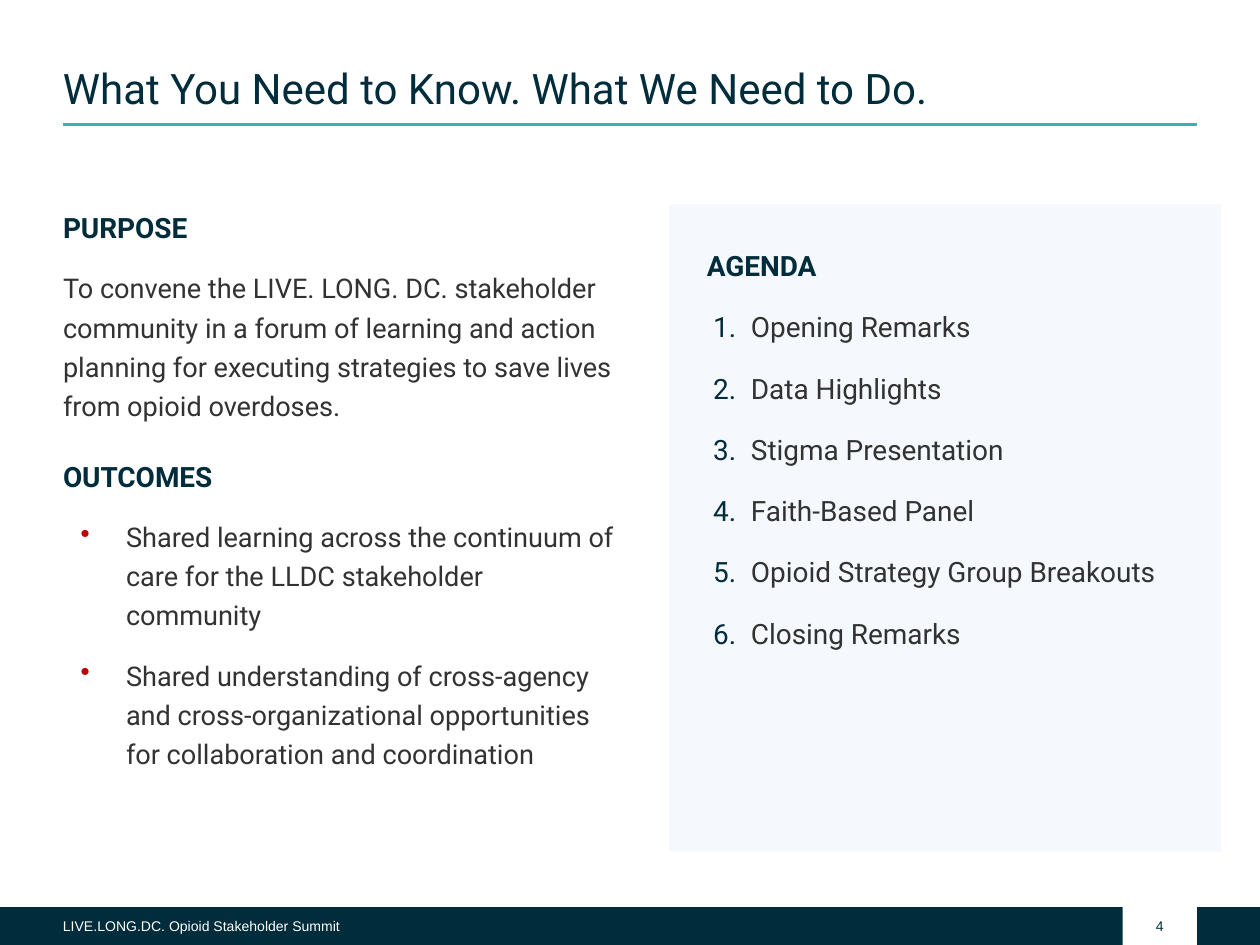
from dataclasses import dataclass

import lxml.etree
import pptx
import pptx.dml.color
import pptx.enum.shapes
import pptx.enum.text
import pptx.oxml.ns
import pptx.util

Inches = pptx.util.Inches
Pt = pptx.util.Pt
qn = pptx.oxml.ns.qn
ANCHOR = pptx.enum.text.MSO_ANCHOR


@dataclass(frozen=True)
class Theme:
    navy: str = "012C3B"
    teal: str = "32B2B9"
    red: str = "BF0000"
    ink: str = "313231"
    white: str = "FFFFFF"
    panel: str = "ECF3FC"
    panel_alpha: int = 48
    font: str = "Roboto"
    footer_font: str = "Arial"
    title_size: float = 24
    heading_size: float = 16
    body_size: float = 15.5
    footer_size: float = 8
    line_spacing: float = 1.2


THEME = Theme()
MARGIN = 0.5
COLUMN_TOP, COLUMN_WIDTH, COLUMN_HEIGHT = 1.62, 4.38, 5.14
FOOTER_TOP, FOOTER_HEIGHT = 7.2, 0.3
OUTCOMES = (
    "Shared learning across the continuum of care for the LLDC stakeholder community",
    "Shared understanding of cross-agency and cross-organizational opportunities "
    "for collaboration and coordination",
)
AGENDA = (
    "Opening Remarks",
    "Data Highlights",
    "Stigma Presentation",
    "Faith-Based Panel",
    "Opioid Strategy Group Breakouts",
    "Closing Remarks",
)


def rgb(color):
    return pptx.dml.color.RGBColor.from_string(color)


def prepare_frame(shape, anchor, inset=0):
    frame = shape.text_frame
    frame.word_wrap = True
    frame.vertical_anchor = anchor
    frame.margin_left = frame.margin_right = Inches(inset)
    frame.margin_top = frame.margin_bottom = Inches(inset)
    return frame


def add_box(slide, left, top, width, height, color, alpha=None):
    shape = slide.shapes.add_shape(
        pptx.enum.shapes.MSO_SHAPE.RECTANGLE,
        Inches(left), Inches(top), Inches(width), Inches(height),
    )
    shape.shadow.inherit = False
    shape.fill.solid()
    shape.fill.fore_color.rgb = rgb(color)
    shape.line.fill.background()
    if alpha is not None:
        fill_color = shape.fill._xPr.find(qn("a:solidFill"))[0]
        lxml.etree.SubElement(fill_color, qn("a:alpha"), val=str(alpha * 1000))
    return shape


def add_text_frame(slide, left, top, width, height, anchor=ANCHOR.TOP):
    box = slide.shapes.add_textbox(
        Inches(left), Inches(top), Inches(width), Inches(height)
    )
    return prepare_frame(box, anchor)


def add_rule(slide, left, right, y):
    rule = slide.shapes.add_connector(
        pptx.enum.shapes.MSO_CONNECTOR.STRAIGHT,
        Inches(left), Inches(y), Inches(right), Inches(y),
    )
    rule.line.color.rgb = rgb(THEME.teal)
    rule.line.width = Pt(2)
    lxml.etree.SubElement(rule._element.spPr, qn("a:effectLst"))


def set_marker(paragraph, color, indent, hanging, tag, **attributes):
    properties = paragraph._p.get_or_add_pPr()
    properties.set("marL", str(Inches(indent)))
    properties.set("indent", str(-Inches(hanging)))
    marker_color = lxml.etree.SubElement(properties, qn("a:buClr"))
    lxml.etree.SubElement(marker_color, qn("a:srgbClr"), val=color)
    lxml.etree.SubElement(properties, qn(tag), **attributes)


def set_bullet(paragraph):
    set_marker(paragraph, THEME.red, 0.5, 0.36, "a:buChar", char="•")


def set_number(paragraph):
    set_marker(paragraph, THEME.navy, 0.35, 0.3, "a:buAutoNum", type="arabicPeriod")


def add_paragraph(frame, text, size, color, font=THEME.font, bold=False,
                  before=0, spacing=None, marker=None,
                  align=pptx.enum.text.PP_ALIGN.LEFT):
    first = frame.paragraphs[0]
    paragraph = frame.add_paragraph() if first.text else first
    paragraph.text = text
    paragraph.alignment = align
    if marker:
        marker(paragraph)
    if spacing:
        paragraph.line_spacing = spacing
    if before:
        paragraph.space_before = Pt(before)
    paragraph.font.name = font
    paragraph.font.size = Pt(size)
    paragraph.font.bold = bold
    paragraph.font.color.rgb = rgb(color)


def add_heading(frame, text, before=0):
    add_paragraph(frame, text, THEME.heading_size, THEME.navy, bold=True,
                  before=before, spacing=THEME.line_spacing)


def add_body(frame, text, size=THEME.body_size, marker=None):
    add_paragraph(frame, text, size, THEME.ink, before=12,
                  spacing=THEME.line_spacing, marker=marker)


def add_title(slide, text):
    frame = add_text_frame(slide, MARGIN, 0.17, 7.56, 0.73, ANCHOR.BOTTOM)
    add_paragraph(frame, text, THEME.title_size, THEME.navy, spacing=0.9)
    add_rule(slide, MARGIN, 10 - MARGIN, 0.99)


def add_purpose(slide):
    frame = add_text_frame(slide, MARGIN, COLUMN_TOP, COLUMN_WIDTH, COLUMN_HEIGHT)
    add_heading(frame, "PURPOSE")
    add_body(frame, "To convene the LIVE. LONG. DC. stakeholder community in a forum "
                    "of learning and action planning for executing strategies to save "
                    "lives from opioid overdoses.")
    add_heading(frame, "OUTCOMES", before=18)
    for outcome in OUTCOMES:
        add_body(frame, outcome, marker=set_bullet)


def add_agenda(slide):
    panel = add_box(slide, 5.31, COLUMN_TOP, COLUMN_WIDTH, COLUMN_HEIGHT,
                    THEME.panel, THEME.panel_alpha)
    frame = prepare_frame(panel, ANCHOR.TOP, inset=0.3)
    add_heading(frame, "AGENDA")
    for item in AGENDA:
        add_body(frame, item, THEME.heading_size, set_number)


def add_footer(slide, text, number):
    add_box(slide, 0, FOOTER_TOP, 10, FOOTER_HEIGHT, THEME.navy)
    number_box = add_box(slide, 8.91, FOOTER_TOP, 0.59, FOOTER_HEIGHT, THEME.white)
    add_paragraph(prepare_frame(number_box, ANCHOR.MIDDLE), number,
                  THEME.footer_size, THEME.navy, THEME.footer_font,
                  align=pptx.enum.text.PP_ALIGN.CENTER)
    frame = add_text_frame(slide, MARGIN, FOOTER_TOP, 4.66, 0.29, ANCHOR.MIDDLE)
    add_paragraph(frame, text, THEME.footer_size, THEME.white, THEME.footer_font)


def main():
    presentation = pptx.Presentation()
    presentation.slide_width = Inches(10)
    presentation.slide_height = Inches(7.5)
    slide = presentation.slides.add_slide(presentation.slide_layouts[6])
    add_title(slide, "What You Need to Know. What We Need to Do.")
    add_purpose(slide)
    add_agenda(slide)
    add_footer(slide, "LIVE.LONG.DC. Opioid Stakeholder Summit", "4")
    presentation.save("out.pptx")


if __name__ == "__main__":
    main()
